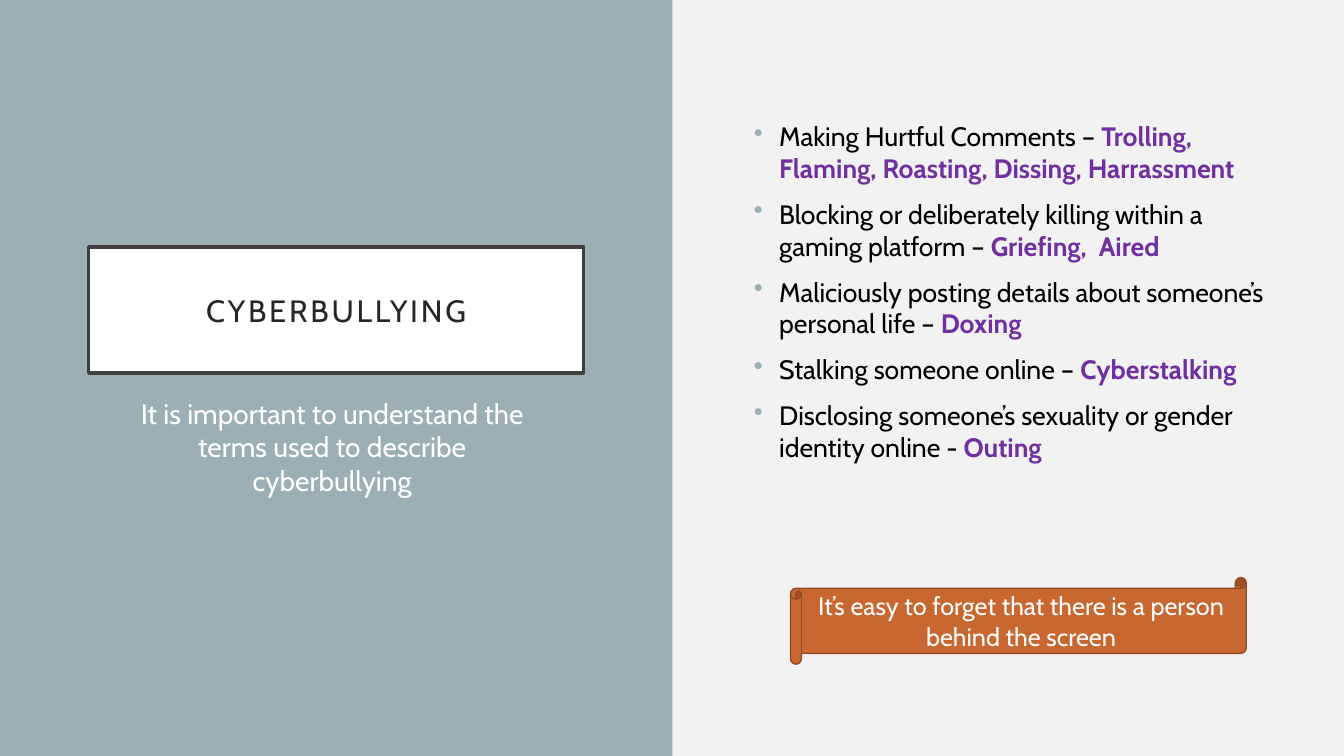
from lxml.etree import SubElement as Sub
from pptx import Presentation
from pptx.dml.color import RGBColor as RGB
from pptx.enum.shapes import MSO_SHAPE as Shape
from pptx.enum.text import MSO_ANCHOR as Anchor, PP_ALIGN as Align
from pptx.oxml.ns import qn
from pptx.util import Inches, Pt

TEAL, WHITE, BLACK, PURPLE = "9BAFB5", "FFFFFF", "000000", "7030A0"


def color(code):
    return RGB.from_string(code)


class Deck:
    font = "Cabin"

    def __init__(self, width, height, back):
        self.file = Presentation()
        self.file.slide_width = Inches(width)
        self.file.slide_height = Inches(height)
        self.slide = self.file.slides.add_slide(self.file.slide_layouts[6])
        self.paint(self.slide.background.fill, back)

    def paint(self, fill, code):
        fill.solid()
        fill.fore_color.rgb = color(code)

    def shape(self, kind, place, fill, line=None, width=1):
        item = self.slide.shapes.add_shape(kind, *map(Inches, place))
        item.shadow.inherit = False
        self.paint(item.fill, fill)
        if line:
            self.paint(item.line.fill, line)
            item.line.width = Pt(width)
        else:
            item.line.fill.background()
        return item

    def box(self, place):
        return self.slide.shapes.add_textbox(*map(Inches, place))

    def frame(self, item, anchor=Anchor.TOP, inset=None):
        frame = item.text_frame
        frame.word_wrap = True
        frame.vertical_anchor = anchor
        if inset is not None:
            for side in ("left", "top", "right", "bottom"):
                setattr(frame, f"margin_{side}", Inches(inset))
        return frame

    def run(self, para, text, size, code, bold=False):
        run = para.add_run()
        run.text = text
        style = {"name": self.font, "size": Pt(size), "bold": bold}
        for key, value in style.items():
            setattr(run.font, key, value)
        run.font.color.rgb = color(code)
        return run

    def center(self, frame, text, size, code):
        para = frame.paragraphs[0]
        para.alignment = Align.CENTER
        return self.run(para, text, size, code)

    def bullet(self, para, code):
        props = para._p.get_or_add_pPr()
        props.set("marL", str(Inches(0.25)))
        props.set("indent", str(-Inches(0.25)))
        tint = Sub(props, qn("a:buClr"))
        Sub(tint, qn("a:srgbClr"), val=code)
        Sub(props, qn("a:buChar"), char="•")

    def terms(self, frame, rows, size):
        for i, (lead, term) in enumerate(rows):
            para = frame.add_paragraph() if i else frame.paragraphs[0]
            self.bullet(para, TEAL)
            para.alignment = Align.LEFT
            para.space_before = Pt(10 if i else 0)
            self.run(para, lead, size, BLACK)
            self.run(para, term, size, PURPLE, True)


def main():
    deck = Deck(13.33, 7.5, "F2F2F2")

    # Left panel and title
    deck.shape(Shape.RECTANGLE, (0, 0, 6.67, 7.5), TEAL)
    title = deck.shape(Shape.RECTANGLE, (0.88, 2.45, 4.91, 1.25), WHITE, "404040", 2.5)
    head = deck.center(deck.frame(title, Anchor.MIDDLE, 0.2), "CYBERBULLYING", 22, "262626")
    head.font._element.set("spc", "200")

    # Terms
    rows = [
        ("Making Hurtful Comments – ", "Trolling, Flaming, Roasting, Dissing, Harrassment"),
        ("Blocking or deliberately killing within a gaming platform – ", "Griefing,  Aired"),
        ("Maliciously posting details about someone’s personal life – ", "Doxing"),
        ("Stalking someone online – ", "Cyberstalking"),
        ("Disclosing someone’s sexuality or gender identity online - ", "Outing"),
    ]
    deck.terms(deck.frame(deck.box((7.38, 1.14, 5.27, 5.74))), rows, 19)

    # Text under the title
    note = deck.frame(deck.box((1.22, 3.88, 4.15, 2.4)))
    deck.center(note, "It is important to understand the terms used to describe cyberbullying", 20, WHITE)

    # Scroll
    scroll = deck.shape(Shape.HORIZONTAL_SCROLL, (7.84, 5.73, 4.52, 0.86), "C96731", "954C24")
    deck.center(deck.frame(scroll, Anchor.MIDDLE),
                "It’s easy to forget that there is a person behind the screen", 18, WHITE)

    deck.file.save("out.pptx")


if __name__ == "__main__":
    main()
